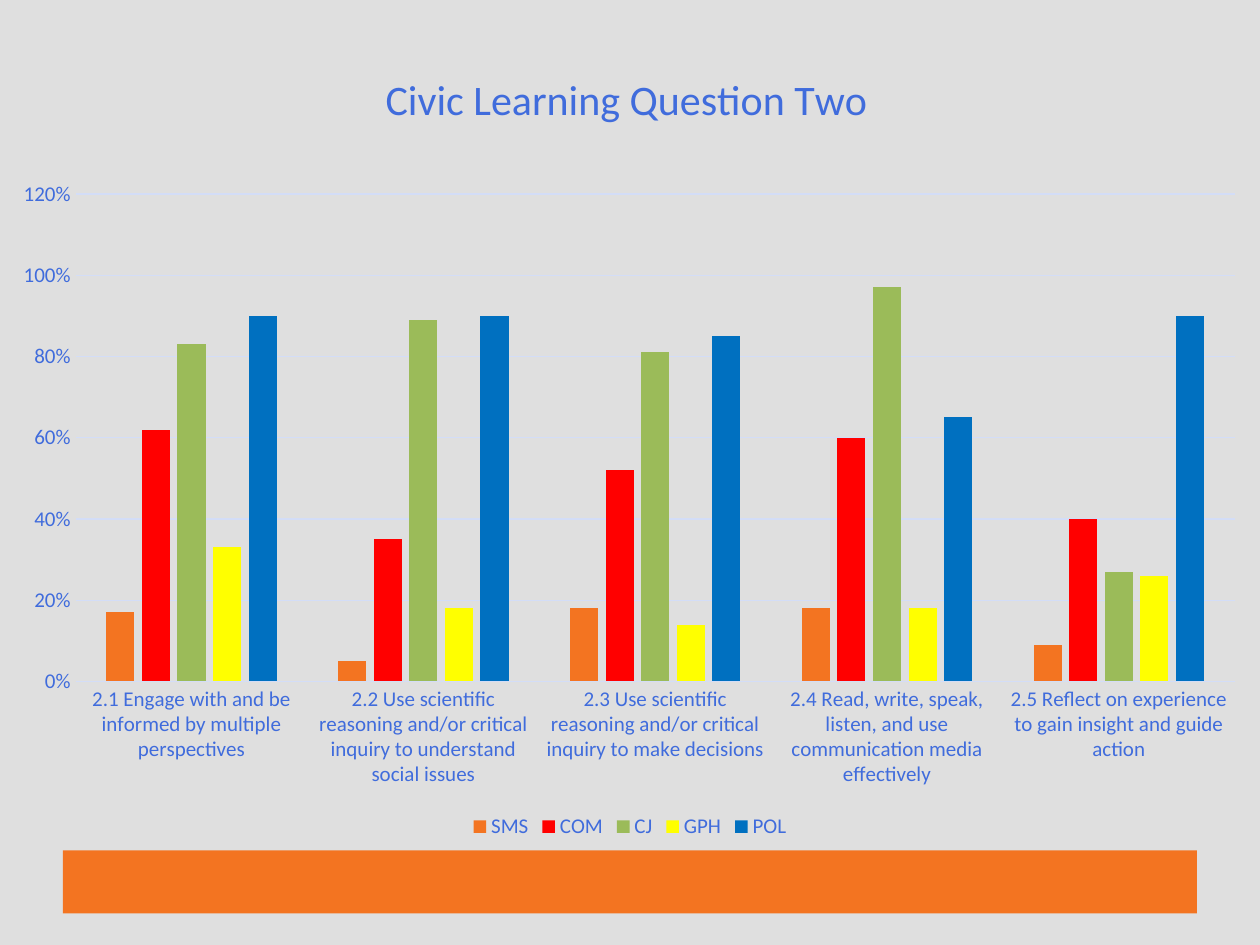
from dataclasses import dataclass

from pptx import Presentation
from pptx.chart.data import CategoryChartData as ChartData
from pptx.dml.color import RGBColor as RGB
from pptx.enum.chart import XL_CHART_TYPE as Kind, XL_LEGEND_POSITION as Place
from pptx.enum.chart import XL_TICK_MARK as Tick
from pptx.enum.shapes import MSO_SHAPE as Preset
from pptx.oxml import parse_xml
from pptx.oxml.ns import nsdecls, qn
from pptx.util import Inches, Pt


@dataclass(frozen=True)
class Theme:
    back: str = "DFDFDF"
    band: str = "F37421"
    text: str = "406CDC"
    grid: str = "D3DDF7"
    face: str = "Calibri"
    head: int = 24
    body: int = 12
    rule: float = 0.75


THEME = Theme()
TITLE = "Civic Learning Question Two"
GOALS = [
    "2.1 Engage with and be informed by multiple perspectives",
    "2.2 Use scientific reasoning and/or critical inquiry to understand social issues",
    "2.3 Use scientific reasoning and/or critical inquiry to make decisions",
    "2.4 Read, write, speak, listen, and use communication media effectively",
    "2.5 Reflect on experience to gain insight and guide action",
]
UNITS = [
    ("SMS", "F37421", (0.17, 0.05, 0.18, 0.18, 0.09)),
    ("COM", "FF0000", (0.62, 0.35, 0.52, 0.6, 0.4)),
    ("CJ", "9BBB59", (0.83, 0.89, 0.81, 0.97, 0.27)),
    ("GPH", "FFFF00", (0.33, 0.18, 0.14, 0.18, 0.26)),
    ("POL", "0070C0", (0.9, 0.9, 0.85, 0.65, 0.9)),
]


def put(item, **values):
    for name, value in values.items():
        setattr(item, name, value)


def paint(fill, tone):
    fill.solid()
    fill.fore_color.rgb = RGB.from_string(tone)


def style(font, size):
    put(font, name=THEME.face, size=Pt(size), bold=False)
    font.color.rgb = RGB.from_string(THEME.text)


def rule(line):
    paint(line.fill, THEME.grid)
    line.width = Pt(THEME.rule)


def pin(part, index, inner=False, **box):
    """Fix a chart part at fractions of the chart area."""
    for old in part.findall(qn("c:layout")):
        part.remove(old)
    marks = '<c:layoutTarget val="inner"/>' if inner else ""
    marks += "".join(f'<c:{key}Mode val="edge"/>' for key in "xy")
    marks += "".join(f'<c:{key} val="{value}"/>' for key, value in box.items())
    part.insert(index, parse_xml(
        f'<c:layout {nsdecls("c")}><c:manualLayout>{marks}</c:manualLayout></c:layout>'))


def add_head(chart):
    frame = chart.chart_title.text_frame
    frame.text = TITLE
    style(frame.paragraphs[0].runs[0].font, THEME.head)
    pin(chart.chart_title.element, 1, x=0.3, y=0.04)


def add_axes(chart):
    goal, share = chart.category_axis, chart.value_axis
    for axis in (goal, share):
        put(axis, major_tick_mark=Tick.NONE, minor_tick_mark=Tick.NONE)
        style(axis.tick_labels.font, THEME.body)
    rule(goal.format.line)
    share.format.line.fill.background()
    put(share, minimum_scale=0, maximum_scale=1.2, major_unit=0.2,
        has_major_gridlines=True)
    rule(share.major_gridlines.format.line)
    put(share.tick_labels, number_format="0%", number_format_is_linked=False)


def add_bars(slide, box):
    data = ChartData(number_format="0%")
    data.categories = GOALS
    for name, _, shares in UNITS:
        data.add_series(name, shares)
    chart = slide.shapes.add_chart(Kind.COLUMN_CLUSTERED, *box, data).chart
    style(chart.font, THEME.body)
    put(chart, has_title=True, has_legend=True)
    put(chart.legend, position=Place.BOTTOM, include_in_layout=False)
    style(chart.legend.font, THEME.body)
    plot = chart.plots[0]
    put(plot, gap_width=219, overlap=-27, vary_by_categories=False)
    for bars, (_, tone, _) in zip(plot.series, UNITS):
        paint(bars.format.fill, tone)
        bars.invert_if_negative = False
    add_head(chart)
    add_axes(chart)
    area = chart.element.find(".//" + qn("c:plotArea"))
    pin(area, 0, inner=True, x=0.06, y=0.2, w=0.92, h=0.6)


def add_band(slide, box):
    band = slide.shapes.add_shape(Preset.RECTANGLE, *box)
    band.shadow.inherit = False
    paint(band.fill, THEME.band)
    band.line.fill.background()


def main():
    deck = Presentation()
    put(deck, slide_width=Inches(10), slide_height=Inches(7.5))
    slide = deck.slides.add_slide(deck.slide_layouts[6])
    paint(slide.background.fill, THEME.back)
    add_band(slide, [Inches(n) for n in (0.5, 6.75, 9, 0.5)])
    add_bars(slide, [Inches(n) for n in (0, 0.25, 10, 6.45)])
    deck.save("out.pptx")


if __name__ == "__main__":
    main()
